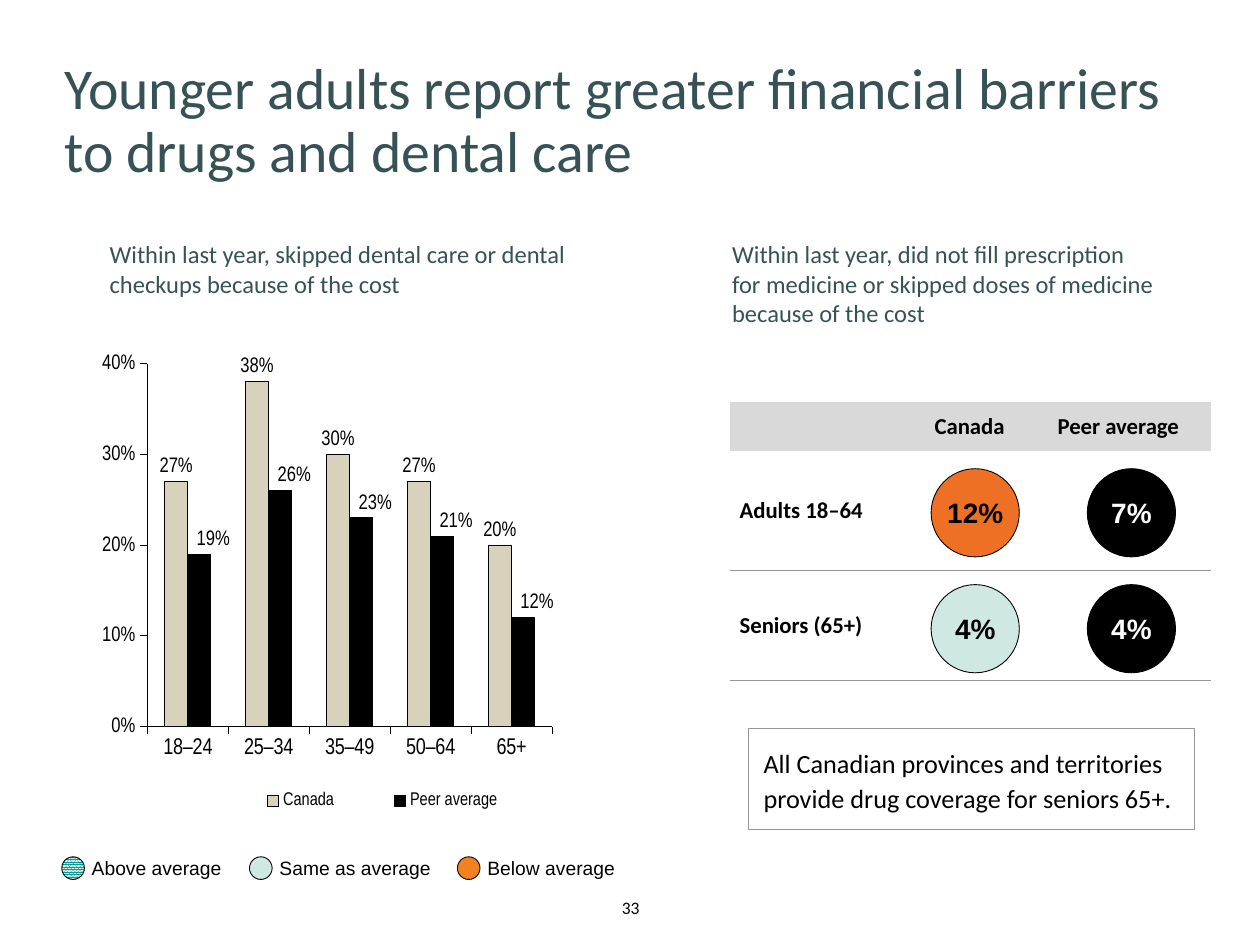
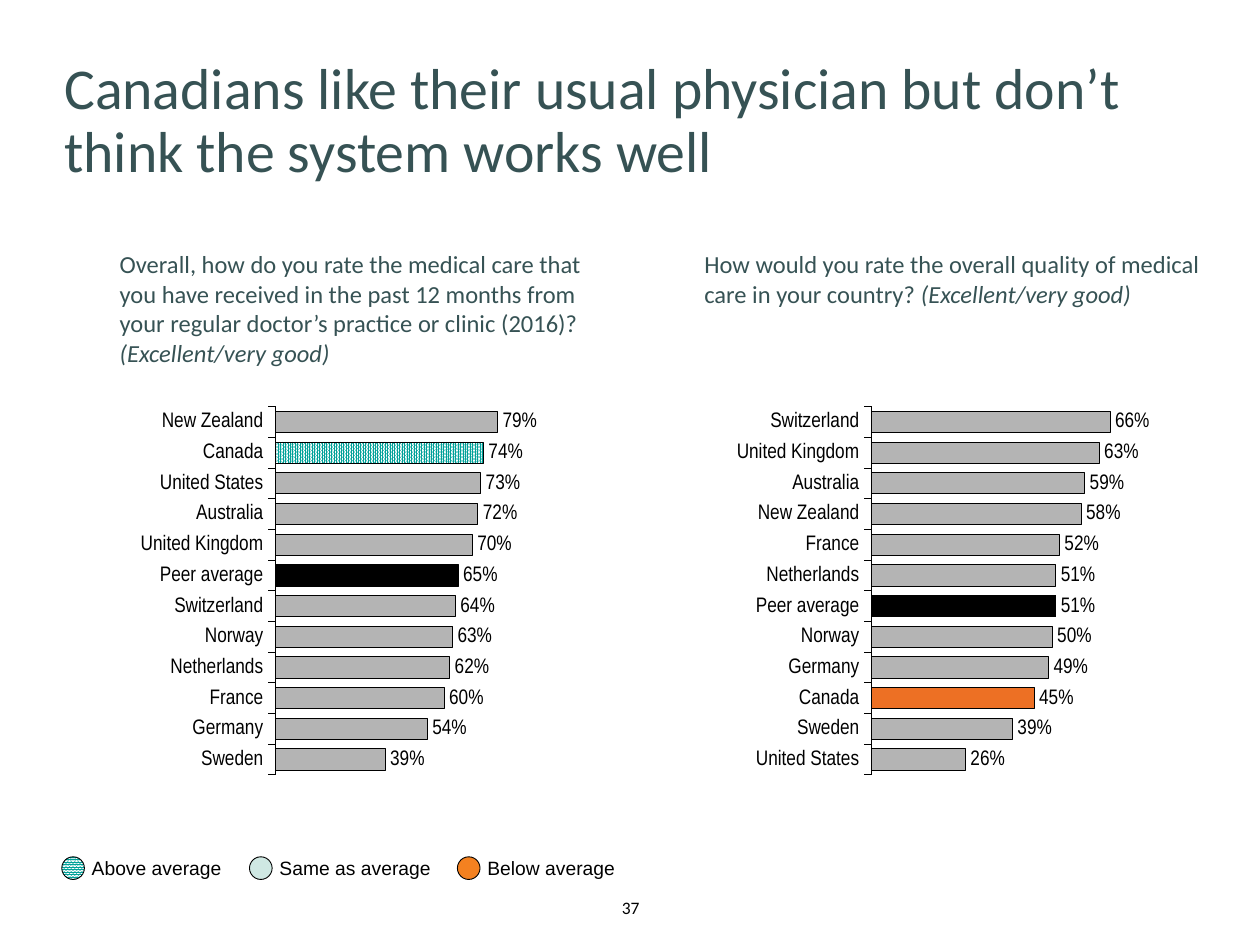
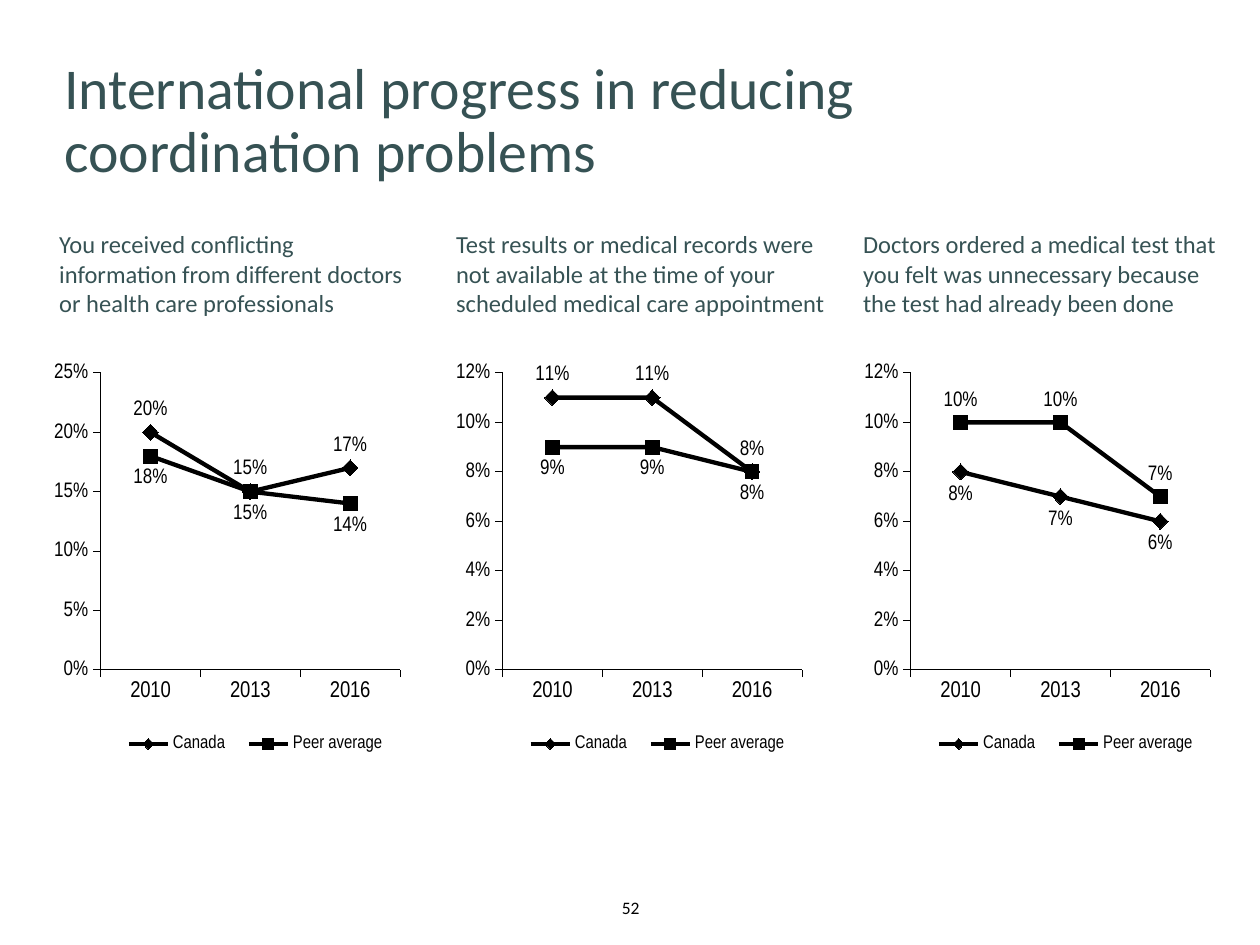
from dataclasses import dataclass
from lxml.etree import SubElement
from pptx import Presentation
from pptx.chart.data import CategoryChartData
from pptx.dml.color import RGBColor
from pptx.enum.chart import (XL_CHART_TYPE, XL_LABEL_POSITION, XL_LEGEND_POSITION,
                             XL_MARKER_STYLE, XL_TICK_LABEL_POSITION, XL_TICK_MARK)
from pptx.enum.dml import MSO_PATTERN
from pptx.enum.shapes import MSO_SHAPE
from pptx.enum.text import MSO_ANCHOR, MSO_AUTO_SIZE, PP_ALIGN
from pptx.oxml.ns import qn
from pptx.util import Inches, Pt


@dataclass(frozen=True)
class Theme:
    black: str = "000000"
    white: str = "FFFFFF"
    teal: str = "365254"
    sand: str = "D8D2BC"
    head: str = "D9D9D9"
    rule: str = "969696"
    bar: str = "B4B4B4"
    above: str = "00A199"
    same: str = "CFE8E3"
    below: str = "ED7024"
    key: str = "F48120"
    body: str = "Calibri"
    sans: str = "Arial"
    slim: str = "Arial Narrow"
    title: float = 33
    note: float = 15
    text: float = 14
    cell: float = 13
    axis: float = 12
    small: float = 11
    legend: float = 10.5
    page: float = 10
    badge: float = 16
    thin: float = 0.5


T = Theme()
PAD = 0.12
PLAIN = "{2D5ABB26-0587-4C30-8999-92F81FD0307C}"  # table style without grid
MEAN = "Peer average"
COLS = "Canada", MEAN

# Content
KEYS = [("Above average", 0.49, T.above), ("Same as average", 1.98, T.same),
        ("Below average", 3.63, T.key)]

COST = dict(
    title="Younger adults report greater financial barriers to drugs and dental care",
    page="33",
    caps=[
        ("Within last year, skipped dental care or dental checkups because of the cost",
         "", (0.75, 1.78, 3.94, 0.71)),
        ("Within last year, did not fill prescription\nfor medicine or skipped doses "
         "of medicine because of the cost", "", (5.69, 1.78, 3.88, 0.95))],
    ages=["18–24", "25–34", "35–49", "50–64", "65+"],
    rates=[(0.27, 0.38, 0.3, 0.27, 0.2), (0.19, 0.26, 0.23, 0.21, 0.12)],
    rows=[("Adults 18–64", [("12%", T.below, T.black), ("7%", T.black, T.white)]),
          ("Seniors (65+)", [("4%", T.same, T.black), ("4%", T.black, T.white)])],
    note="All Canadian provinces and territories provide drug coverage for seniors 65+.")

CARE = dict(
    title="Canadians like their usual physician but don’t think the system works well",
    page="37",
    caps=[
        ("Overall, how do you rate the medical care that you have received in the past "
         "12 months from your regular doctor’s practice or clinic (2016)? ",
         "(Excellent/very good)", (0.83, 1.86, 3.94, 1.18)),
        ("How would you rate the overall quality of medical care in your country? ",
         "(Excellent/very good)", (5.47, 1.86, 4.2, 0.71))],
    ranks=[
        (0.76, 0.9, T.above, [
            ("Sweden", 0.39), ("Germany", 0.54), ("France", 0.6), ("Netherlands", 0.62),
            ("Norway", 0.63), ("Switzerland", 0.64), (MEAN, 0.65),
            ("United Kingdom", 0.7), ("Australia", 0.72), ("United States", 0.73),
            ("Canada", 0.74), ("New Zealand", 0.79)]),
        (5.49, 0.7, T.below, [
            ("United States", 0.26), ("Sweden", 0.39), ("Canada", 0.45), ("Germany", 0.49),
            ("Norway", 0.5), (MEAN, 0.51), ("Netherlands", 0.51),
            ("France", 0.52), ("New Zealand", 0.58), ("Australia", 0.59),
            ("United Kingdom", 0.63), ("Switzerland", 0.66)])])

TREND = dict(
    title="International progress in reducing\ncoordination problems",
    page="52",
    caps=[
        ("You received conflicting information from different doctors or health care "
         "professionals", "", (0.35, 1.7, 2.99, 0.95)),
        ("Test results or medical records were not available at the time of your "
         "scheduled medical care appointment", "", (3.5, 1.7, 3.23, 0.95)),
        ("Doctors ordered a medical test that you felt was unnecessary because\n"
         "the test had already been done", "", (6.73, 1.7, 3.23, 0.95))],
    years=["2010", "2013", "2016"],
    # left, axis top, axis step, values for Canada and the average
    plots=[(0.43, 0.25, 0.05, [(0.2, 0.15, 0.17), (0.18, 0.15, 0.14)]),
           (3.62, 0.12, 0.02, [(0.11, 0.11, 0.08), (0.09, 0.09, 0.08)]),
           (6.86, 0.12, 0.02, [(0.08, 0.07, 0.06), (0.1, 0.1, 0.07)])])


# Text and shapes
def rgb(code):
    return RGBColor.from_string(code)


def box(spot):
    return [Inches(n) for n in spot]


def style(font, size, face, color=T.black):
    font.size, font.name = Pt(size), face
    font.color.rgb = rgb(color)


def write(frame, text, *, tail="", size=T.text, face=T.body, color=T.black, bold=False,
          align=PP_ALIGN.LEFT, anchor=MSO_ANCHOR.TOP, pad=None, pitch=None):
    """Fill a frame with one paragraph; tail follows in italics."""
    frame.word_wrap = True
    frame.vertical_anchor = anchor
    if pad is not None:
        frame.margin_left = frame.margin_right = Inches(pad)
        frame.margin_top = frame.margin_bottom = Inches(pad)
    para = frame.paragraphs[0]
    para.alignment = align
    if pitch:
        para.line_spacing = Pt(pitch)
    runs = [(line, False) for line in text.split("\n")] + ([(tail, True)] if tail else [])
    for i, (line, slant) in enumerate(runs):
        if i and not slant:
            para.add_line_break()
        run = para.add_run()
        run.text = line
        style(run.font, size, face, color)
        run.font.bold, run.font.italic = bold, slant


def label(slide, text, spot, **form):
    write(slide.shapes.add_textbox(*box(spot)).text_frame, text, **form)


def paint(fill, color):
    if color is None:
        fill.background()
    elif color == T.above:
        fill.patterned()
        fill.pattern = MSO_PATTERN.PERCENT_90
        fill.fore_color.rgb, fill.back_color.rgb = rgb(color), rgb(T.white)
    else:
        fill.solid()
        fill.fore_color.rgb = rgb(color)


def stroke(line, color=T.black, width=T.thin):
    line.color.rgb = rgb(color)
    line.width = Pt(width)


def draw(slide, kind, spot, color, edge=T.black):
    shape = slide.shapes.add_shape(kind, *box(spot))
    shape.shadow.inherit = False
    paint(shape.fill, color)
    stroke(shape.line, edge)
    return shape


def start(deck, data):
    """Add a slide with its title, page number and captions."""
    slide = deck.slides.add_slide(deck.slide_layouts[5])
    title = slide.shapes.title
    title.left, title.top, title.width, title.height = box((0.41, 0.41, 9, 1.11))
    write(title.text_frame, data["title"], size=T.title, color=T.teal, pitch=36)
    title.text_frame.auto_size = MSO_AUTO_SIZE.NONE
    label(slide, data["page"], (4.69, 7.12, 0.63, 0.17), size=T.page, pad=0,
          align=PP_ALIGN.CENTER, anchor=MSO_ANCHOR.MIDDLE)
    for text, tail, spot in data["caps"]:
        label(slide, text, spot, tail=tail, color=T.teal, pad=PAD)
    return slide


def add_keys(slide):
    for text, left, color in KEYS:
        label(slide, text, (left + 0.14, 6.75, 1.6, 0.29), size=T.small, face=T.sans)
        draw(slide, MSO_SHAPE.OVAL, (left, 6.8, 0.18, 0.18), color)


# Charts
def place(node, at, spot, inner=False, edge=True):
    """Give a chart part a manual layout, as shares of the chart."""
    for old in node.findall(qn("c:layout")):
        node.remove(old)
    layout = SubElement(node, qn("c:layout"))
    node.insert(at, layout)
    manual = SubElement(layout, qn("c:manualLayout"))
    parts = [("layoutTarget", "inner")] if inner else []
    parts += [("xMode", "edge"), ("yMode", "edge")] if edge else []
    for tag, value in parts + list(zip("xywh", spot)):
        SubElement(manual, qn("c:" + tag)).set("val", str(value))


def add_plot(slide, kind, spot, cats, series, area, top, step=None, legend=None):
    data = CategoryChartData(number_format="0%")
    data.categories = cats
    for name, vals in series:
        data.add_series(name, vals)
    chart = slide.shapes.add_chart(kind, *box(spot), data).chart
    chart.has_title = False
    style(chart.font, T.axis, T.slim)
    place(chart._chartSpace.chart.plotArea, 0, area, inner=True)
    chart.plots[0].vary_by_categories = False

    cat, val = chart.category_axis, chart.value_axis
    for axis, size in ((cat, T.cell if legend else T.axis), (val, T.axis)):
        axis.has_major_gridlines = False
        axis.major_tick_mark, axis.minor_tick_mark = XL_TICK_MARK.OUTSIDE, XL_TICK_MARK.NONE
        style(axis.tick_labels.font, size, T.slim)
        stroke(axis.format.line)
    val.minimum_scale, val.maximum_scale = 0, top
    if step:
        val.major_unit = step
        val.tick_labels.number_format = "0%"
        val.tick_labels.number_format_is_linked = False
    else:
        val.tick_label_position = XL_TICK_LABEL_POSITION.NONE
        val.format.line.fill.background()

    chart.has_legend = bool(legend)
    if legend:
        chart.legend.position = XL_LEGEND_POSITION.BOTTOM
        chart.legend.include_in_layout = False
        style(chart.legend.font, T.legend, T.slim)
        place(chart.legend._element, 1, legend)
    return chart


def show(series, spot):
    labels = series.data_labels
    labels.show_value = True
    labels.number_format, labels.number_format_is_linked = "0%", False
    labels.position = spot
    style(labels.font, T.axis, T.slim)


def add_columns(slide, data):
    chart = add_plot(slide, XL_CHART_TYPE.COLUMN_CLUSTERED, (0.81, 2.52, 3.87, 4.06),
                     data["ages"], zip(COLS, data["rates"]), (0.06, 0.09, 0.86, 0.71),
                     0.4, 0.1, (0.2, 0.91, 0.72, 0.07))
    plot = chart.plots[0]
    plot.gap_width, plot.overlap = 150, 0
    for series, color in zip(plot.series, (T.sand, T.black)):
        paint(series.format.fill, color)
        stroke(series.format.line)
        show(series, XL_LABEL_POSITION.OUTSIDE_END)
    for i in range(len(data["ages"])):
        tag = plot.series[1].points[i].data_label
        style(tag.font, T.axis, T.slim)
        tag.position = XL_LABEL_POSITION.OUTSIDE_END
    for node in plot.series[1]._element.iter(qn("c:dLbl")):
        place(node, 1, (0.03, 0), edge=False)


def add_bars(slide, left, top, accent, ranks):
    cats, vals = zip(*ranks)
    chart = add_plot(slide, XL_CHART_TYPE.BAR_CLUSTERED, (left, 2.81, 3.86, 3.48),
                     cats, [("Series 1", vals)], (0.37, 0.12, 0.52, 0.84), top)
    plot = chart.plots[0]
    plot.gap_width = 45
    series = plot.series[0]
    paint(series.format.fill, T.bar)
    stroke(series.format.line)
    for name, color in zip(COLS, (accent, T.black)):
        point = series.points[cats.index(name)].format
        paint(point.fill, color)
        stroke(point.line)
    show(series, XL_LABEL_POSITION.OUTSIDE_END)


def add_lines(slide, years, left, top, step, rates):
    chart = add_plot(slide, XL_CHART_TYPE.LINE_MARKERS, (left, 2.39, 2.83, 3.8), years,
                     zip(COLS, rates), (0.12, 0.15, 0.85, 0.62), top, step,
                     (0.15, 0.89, 0.82, 0.07))
    marks = (XL_MARKER_STYLE.DIAMOND, 9), (XL_MARKER_STYLE.SQUARE, 8)
    spots = [XL_LABEL_POSITION.ABOVE, XL_LABEL_POSITION.BELOW]
    if rates[0][0] < rates[1][0]:
        spots.reverse()
    for series, (mark, size), spot in zip(chart.plots[0].series, marks, spots):
        series.smooth = False
        stroke(series.format.line, width=2.5)
        series.marker.style, series.marker.size = mark, size
        paint(series.marker.format.fill, T.black)
        stroke(series.marker.format.line)
        show(series, spot)


# Table
def rule(cell):
    """Draw a thin line under a cell."""
    line = SubElement(cell._tc.get_or_add_tcPr(), qn("a:lnB"), w=str(Pt(T.thin)))
    fill = SubElement(line, qn("a:solidFill"))
    SubElement(fill, qn("a:srgbClr"), val=T.rule)


def add_grid(slide, rows):
    wide, tall = (1.46, 0.89, 1.47), (0.39, 0.95, 0.87)
    table = slide.shapes.add_table(3, 3, *box((5.79, 3.19, sum(wide), sum(tall)))).table
    table.first_row = table.horz_banding = False
    next(table._tbl.iter(qn("a:tableStyleId"))).text = PLAIN
    for col, size in zip(table.columns, wide):
        col.width = Inches(size)
    texts = [("", *COLS)] + [(name, "", "") for name, _ in rows]
    for r, line in enumerate(texts):
        table.rows[r].height = Inches(tall[r])
        for c, text in enumerate(line):
            cell = table.cell(r, c)
            if text:
                write(cell.text_frame, text, size=T.cell, bold=True,
                      align=PP_ALIGN.LEFT if r else PP_ALIGN.CENTER)
            cell.vertical_anchor = MSO_ANCHOR.MIDDLE if r else MSO_ANCHOR.BOTTOM
            cell.margin_left = cell.margin_right = Inches(0.08)
            cell.margin_top = cell.margin_bottom = Inches(0.08 if text else 0)
            if r:
                rule(cell)
            paint(cell.fill, None if r else T.head)
    for r, (_, badges) in enumerate(rows):
        for c, (text, color, ink) in enumerate(badges):
            spot = (7.39 + 1.24 * c, 3.72 + 0.92 * r, 0.7, 0.7)
            write(draw(slide, MSO_SHAPE.OVAL, spot, color).text_frame, text,
                  size=T.badge, face=T.sans, color=ink, bold=True, pad=0,
                  align=PP_ALIGN.CENTER, anchor=MSO_ANCHOR.MIDDLE)


# Slides
def main():
    deck = Presentation()
    deck.slide_width, deck.slide_height = Inches(10), Inches(7.5)

    cost = start(deck, COST)
    add_columns(cost, COST)
    add_grid(cost, COST["rows"])
    note = draw(cost, MSO_SHAPE.RECTANGLE, (5.94, 5.78, 3.54, 0.8), None, T.rule)
    write(note.text_frame, COST["note"], size=T.note, pad=PAD, pitch=20)
    add_keys(cost)

    care = start(deck, CARE)
    for rank in CARE["ranks"]:
        add_bars(care, *rank)
    add_keys(care)

    trend = start(deck, TREND)
    for plot in TREND["plots"]:
        add_lines(trend, TREND["years"], *plot)

    deck.save("out.pptx")


if __name__ == "__main__":
    main()
